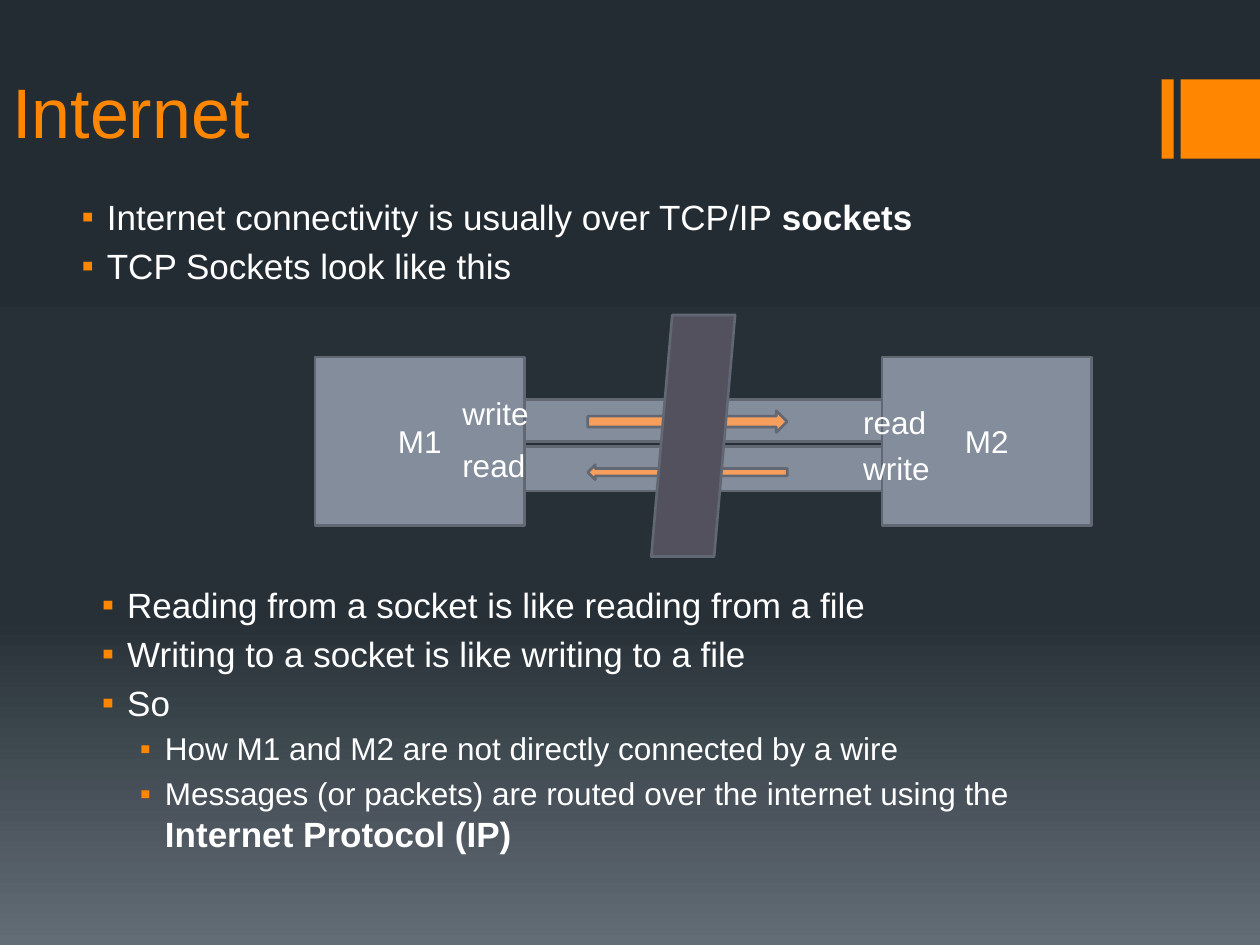
from copy import deepcopy

from lxml import etree
from pptx import Presentation
from pptx.dml.color import RGBColor
from pptx.enum.shapes import MSO_SHAPE
from pptx.enum.text import MSO_ANCHOR, PP_ALIGN
from pptx.oxml.ns import qn
from pptx.util import Cm, Pt

RECT = MSO_SHAPE.RECTANGLE
RIGHT = MSO_SHAPE.RIGHT_ARROW
LEFT = MSO_SHAPE.LEFT_ARROW
SLANT = MSO_SHAPE.PARALLELOGRAM
MIDDLE, BOTTOM, TOP = MSO_ANCHOR.MIDDLE, MSO_ANCHOR.BOTTOM, MSO_ANCHOR.TOP
CENTER = PP_ALIGN.CENTER

ORANGE, WHITE = "FF8600", "FFFFFF"
STEEL, EDGE, PEACH, WALL = "838D9B", "616873", "F69E5C", "53515E"
STOPS = [(0, "242C33"), (0.65, "273037"), (1, "636D76")]
INDENT = {0: 0.25, 1: 0.55}  # inches of left margin per level
HANG = 0.2


def paint(color, code):
    color.rgb = RGBColor.from_string(code)


def style(item, form):
    for name, value in form.items():
        setattr(item, name, value)


def add_run(para, text, size, code=WHITE, bold=False):
    run = para.add_run()
    run.text = text
    style(run.font, {"name": "Arial", "size": Pt(size), "bold": bold})
    paint(run.font.color, code)


def add_back(slide):
    fill = slide.background.fill
    fill.gradient()
    fill.gradient_angle = 270
    stops = slide.element.find(".//" + qn("a:gsLst"))
    stops.append(deepcopy(stops[-1]))
    for stop, (place, code) in zip(fill.gradient_stops, STOPS):
        stop.position = place
        paint(stop.color, code)


def add_block(slide, kind, box, code, edge=EDGE, label=None):
    shape = slide.shapes.add_shape(kind, *map(Cm, box))
    shape.shadow.inherit = False
    shape.fill.solid()
    paint(shape.fill.fore_color, code)
    if edge:
        paint(shape.line.color, edge)
        shape.line.width = Pt(1.5)
    else:
        shape.line.fill.background()
    if label:
        shape.text_frame.vertical_anchor = MIDDLE
        para = shape.text_frame.paragraphs[0]
        para.alignment = CENTER
        add_run(para, label, 18)


def add_frame(slide, box, anchor=TOP):
    frame = slide.shapes.add_textbox(*map(Cm, box)).text_frame
    style(frame, {"word_wrap": True, "vertical_anchor": anchor})
    return frame


def add_label(slide, box, text, size=18, code=WHITE, anchor=TOP):
    add_run(add_frame(slide, box, anchor).paragraphs[0], text, size, code)


def set_bullet(para, level):
    props = para._p.get_or_add_pPr()
    props.set("marL", str(Cm(INDENT[level] * 2.54)))
    props.set("indent", str(-Cm(HANG * 2.54)))
    space = etree.SubElement(props, qn("a:spcBef"))
    etree.SubElement(space, qn("a:spcPct"), val="20000")
    tint = etree.SubElement(props, qn("a:buClr"))
    etree.SubElement(tint, qn("a:srgbClr"), val=ORANGE)
    etree.SubElement(props, qn("a:buFont"), typeface="Arial")
    etree.SubElement(props, qn("a:buChar"), char="▪")


def add_list(slide, box, items):
    frame = add_frame(slide, box)
    for i, (level, plain, strong) in enumerate(items):
        para = frame.add_paragraph() if i else frame.paragraphs[0]
        para.level = level
        set_bullet(para, level)
        add_run(para, plain, 18 if level else 20)
        if strong:
            add_run(para, strong, 20, bold=True)


def main():
    deck = Presentation()
    style(deck, {"slide_width": Cm(25.4), "slide_height": Cm(19.05)})
    slide = deck.slides.add_slide(deck.slide_layouts[6])
    add_back(slide)

    # Corner mark and title
    for left, width in [(23.42, 0.24), (23.8, 1.6)]:
        add_block(slide, RECT, (left, 1.6, width, 1.6), ORANGE, None)
    add_label(slide, (0, 0, 23.06, 3.2), "Internet", 40, ORANGE, BOTTOM)

    # Opening points
    add_list(slide, (1.27, 3.81, 20.32, 2.34), [
        (0, "Internet connectivity is usually over TCP/IP ", "sockets"),
        (0, "TCP Sockets look like this", None),
    ])

    # Machines, pipes and flow arrows
    for left, name in [(6.35, "M1"), (17.78, "M2")]:
        add_block(slide, RECT, (left, 7.2, 4.23, 3.39), STEEL, label=name)
    for top, height in [(8.05, 0.85), (9, 0.9)]:
        add_block(slide, RECT, (10.58, top, 7.2, height), STEEL)
    for kind, top, height in [(RIGHT, 8.28, 0.44), (LEFT, 9.37, 0.3)]:
        add_block(slide, kind, (11.85, top, 4.02, height), PEACH)

    # Pipe ends
    for left, top, text in [(9.07, 7.82, "write"), (9.07, 8.86, "read"),
                            (17.15, 8, "read"), (17.15, 8.92, "write")]:
        add_label(slide, (left, top, 2.12, 1.03), text)

    # Closing points
    add_list(slide, (1.68, 11.63, 20.32, 6.35), [
        (0, "Reading from a socket is like reading from a file", None),
        (0, "Writing to a socket is like writing to a file", None),
        (0, "So", None),
        (1, "How M1 and M2 are not directly connected by a wire", None),
        (1, "Messages (or packets) are routed over the internet using the ",
         "Internet Protocol (IP)"),
    ])

    # Wall across the pipes
    add_block(slide, SLANT, (13.13, 6.35, 1.69, 4.87), WALL)

    deck.save("out.pptx")


if __name__ == "__main__":
    main()
